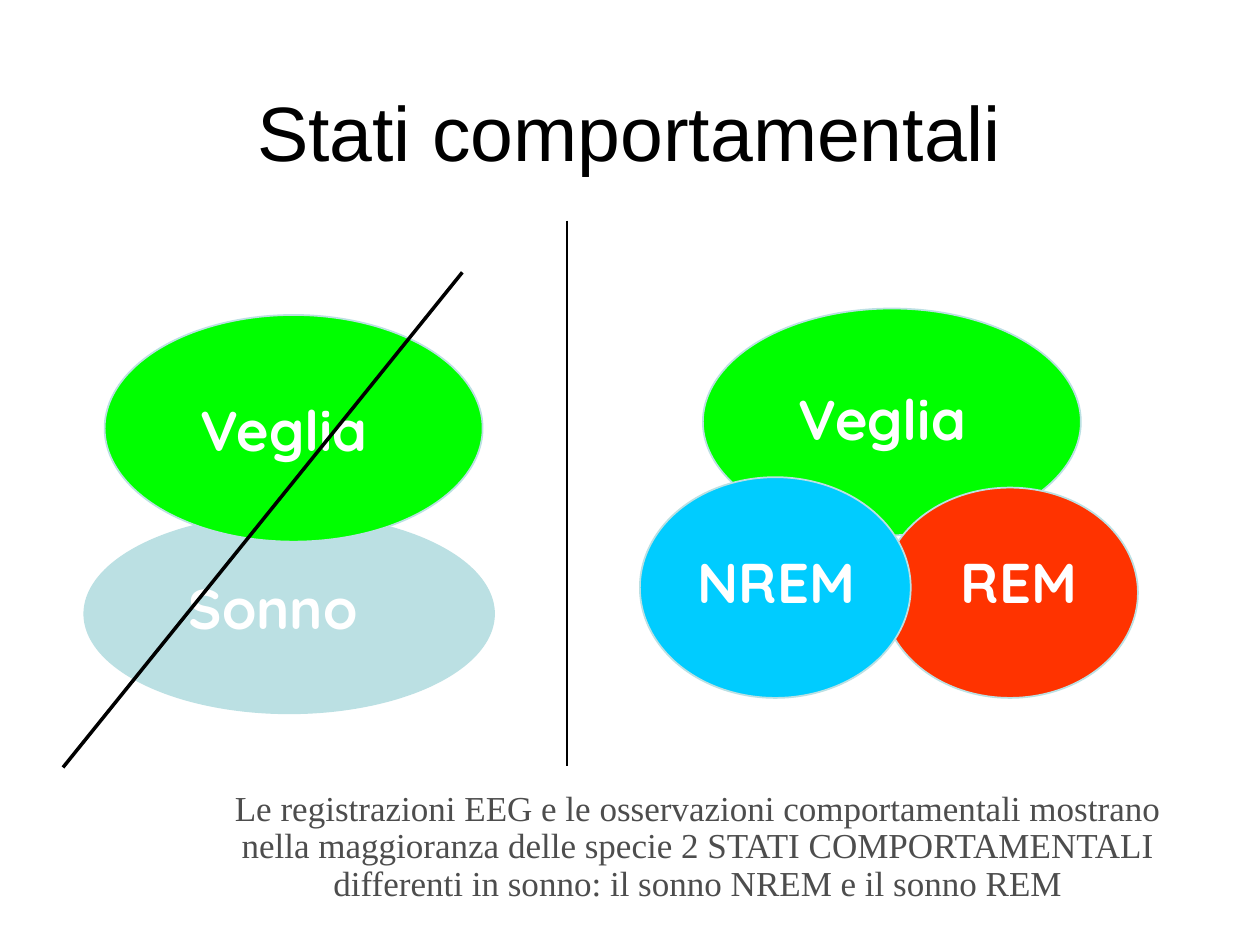
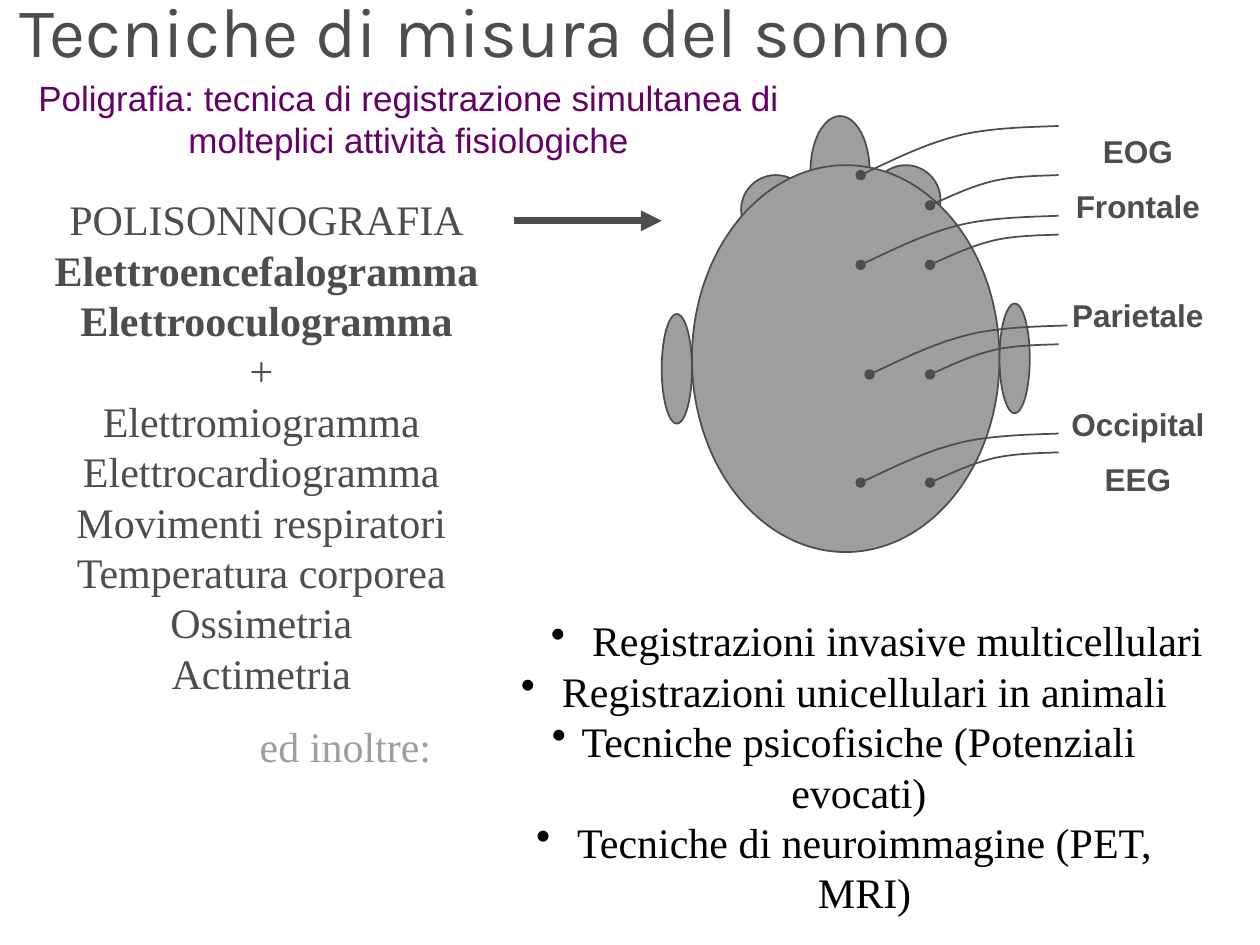
from pptx import Presentation
from pptx.dml.color import RGBColor
from pptx.enum.shapes import MSO_CONNECTOR, MSO_SHAPE
from pptx.enum.text import MSO_ANCHOR, PP_ALIGN
from pptx.oxml.ns import qn
from pptx.util import Cm, Pt
from lxml.etree import SubElement

COLORS = {
    "black": "000000", "white": "FFFFFF", "text": "4D4D4D", "grey": "9E9E9E",
    "wake": "00FF00", "sleep": "BBE0E3", "nrem": "00CCFF", "rem": "FF3300",
    "purple": "660066",
}
SERIF, SANS, ROUNDED, TITLE = "Times New Roman", "Arial", "Quicksand", "Karla"

# Lead from electrode to label, as fractions of its box: start, then two Bézier curves
LEAD_START = (0, 1)
LEAD_CURVES = [(.17, .68), (.33, .36), (.5, .19), (.67, .02), (.91, .02), (1, 0)]


def rgb(name):
    return RGBColor.from_string(COLORS[name])


def write(slide, box, lines, font, size, color, bold=False,
          align=PP_ALIGN.CENTER, anchor=MSO_ANCHOR.TOP, wrap=True):
    """Add a text box with one paragraph per line and return its paragraphs."""
    frame = slide.shapes.add_textbox(*map(Cm, box)).text_frame
    frame.word_wrap = wrap
    frame.vertical_anchor = anchor
    frame.text = "\n".join(lines)
    for paragraph in frame.paragraphs:
        paragraph.alignment = align
        paragraph.font.name = font
        paragraph.font.size = Pt(size)
        paragraph.font.bold = bold
        paragraph.font.color.rgb = rgb(color)
    return frame.paragraphs


def set_right_margin(paragraph, margin):
    paragraph._p.get_or_add_pPr().set("marR", str(Cm(margin)))


def add_bullet(paragraph, hang):
    properties = paragraph._p.get_or_add_pPr()
    properties.set("marL", str(Cm(hang)))
    properties.set("indent", str(-Cm(hang)))
    bullet = properties.makeelement(qn("a:buChar"), {"char": "•"})
    properties.insert_element_before(bullet, "a:tabLst", "a:defRPr", "a:extLst")


def add_ellipse(slide, origin, place, fill, outline):
    left, top, width, height = place
    ellipse = slide.shapes.add_shape(
        MSO_SHAPE.OVAL, Cm(origin[0] + left), Cm(origin[1] + top), Cm(width), Cm(height))
    ellipse.shadow.inherit = False
    ellipse.fill.solid()
    ellipse.fill.fore_color.rgb = rgb(fill)
    ellipse.line.color.rgb = rgb(outline)
    ellipse.line.width = Pt(1)


def add_line(slide, start, end, color, width, arrow=False):
    line = slide.shapes.add_connector(MSO_CONNECTOR.STRAIGHT, *map(Cm, start + end))
    line.line.color.rgb = rgb(color)
    line.line.width = Pt(width)
    if arrow:
        SubElement(line.line._get_or_add_ln(), qn("a:tailEnd"), type="triangle")
    SubElement(line._element.spPr, qn("a:effectLst"))


def add_states(slide, origin, ellipses, labels):
    """Overlapping ellipses with the state names above them."""
    for fill, place in ellipses:
        add_ellipse(slide, origin, place, fill, "sleep")
    for name, left, top, width in labels:
        write(slide, (origin[0] + left, origin[1] + top, width, 1.63), [name],
              ROUNDED, 32, "white", bold=True, anchor=MSO_ANCHOR.MIDDLE, wrap=False)


def add_two_state_model(slide, left, top, width, height):
    """Wake and sleep only, struck out by a diagonal."""
    add_states(slide, (left, top),
               [("sleep", (.43, 4.88, 8.26, 4.01)), ("wake", (.84, .86, 7.62, 4.57))],
               [("Veglia", 2.26, 2.34, 4.39), ("Sonno", 2.08, 5.94, 4.32)])
    add_line(slide, (left, top + height), (left + width, top), "black", 2)


def add_three_state_model(slide, left, top):
    add_states(slide, (left, top),
               [("wake", (1.27, 0, 7.62, 4.57)), ("rem", (4.88, 3.61, 5.16, 4.24)),
                ("nrem", (0, 3.4, 5.46, 4.45))],
               [("Veglia", 2.69, 1.4, 4.39), ("REM", 6.02, 4.67, 3.25),
                ("NREM", .66, 4.67, 4.19)])


def add_lead(slide, x, y, width, height):
    """Curved wire that starts with a dot at the electrode (x, y) and rises right."""
    def locate(point):
        return Cm(x + point[0] * width), Cm(y + (point[1] - 1) * height)

    builder = slide.shapes.build_freeform(*locate(LEAD_START))
    builder.add_line_segments([locate(point) for point in LEAD_CURVES], close=False)
    lead = builder.convert_to_shape()
    segments = list(lead._element.iter(qn("a:lnTo")))
    for first in range(0, len(segments), 3):
        curve = SubElement(segments[0].getparent(), qn("a:cubicBezTo"))
        for segment in segments[first:first + 3]:
            curve.append(segment[0])
    for segment in segments:
        segment.getparent().remove(segment)
    lead.shadow.inherit = False
    lead.fill.background()
    lead.line.color.rgb = rgb("text")
    lead.line.width = Pt(1)
    SubElement(lead.line._get_or_add_ln(), qn("a:headEnd"), type="oval")


def add_electrode_map(slide, left, top):
    """Head seen from above with its electrodes, leads and labels."""
    eye, ear = (1.4, 1.4), (.61, 2.21)
    for place in [(4.22, .99, *eye), (1.6, 1.19, *eye), (3, 0, 1.19, 2.21),
                  (.61, .99, 6.2, 7.8), (6.81, 3.78, *ear), (0, 3.99, *ear)]:
        add_ellipse(slide, (left, top), place, "grey", "text")
    for x, y in [(4.01, 1.19), (4.01, 3), (4.19, 5.21), (4.01, 7.39)]:
        add_lead(slide, left + x, top + y, 3.99, .99)
    for y in (1.8, 3, 5.21, 7.39):
        add_lead(slide, left + 5.41, top + y, 2.59, .61)
    labels = write(slide, (left + 8, top + .2, 3.2, 9.04),
                   ["EOG", "Frontale", "Parietale", "Occipital", "EEG"],
                   SANS, 18, "text", bold=True)
    for label, gap in zip(labels, (0, 9.9, 40.5, 40.5, 9.9)):
        label.space_before = Pt(gap)


def add_polysomnography_list(slide, box):
    lines = write(slide, box, [
        "POLISONNOGRAFIA", "Elettroencefalogramma", "Elettrooculogramma", "+",
        "Elettromiogramma", "Elettrocardiogramma", "Movimenti respiratori",
        "Temperatura corporea", "Ossimetria", "Actimetria"], SERIF, 24, "text")
    for line in lines[1:3]:
        line.font.bold = True
    set_right_margin(lines[3], .21)


def add_further_techniques(slide, box):
    techniques = write(slide, box, [
        "Registrazioni invasive multicellulari",
        "Registrazioni unicellulari in animali",
        "Tecniche psicofisiche (Potenziali evocati)",
        "Tecniche di neuroimmagine (PET, MRI)"], SERIF, 24, "black")
    for technique, hang in zip(techniques, (.83, .83, .6, .83)):
        add_bullet(technique, hang)
    set_right_margin(techniques[1], 1.33)


def build_states_slide(slide):
    write(slide, (1.9, .84, 21.59, 3.61), ["Stati comportamentali"],
          SANS, 44, "black", anchor=MSO_ANCHOR.MIDDLE)
    add_three_state_model(slide, 12.9, 6.22)
    add_line(slide, (11.43, 4.45), (11.43, 15.44), "black", .75)
    add_two_state_model(slide, 1.27, 5.49, 8.05, 9.98)
    caption, = write(slide, (3.81, 15.82, 20.52, 2.59), [
        "Le registrazioni EEG e le osservazioni comportamentali mostrano nella "
        "maggioranza delle specie 2 STATI COMPORTAMENTALI differenti in sonno: "
        "il sonno NREM e il sonno REM"], SERIF, 20, "text")
    caption.line_spacing = .9


def build_techniques_slide(slide):
    add_further_techniques(slide, (9.96, 12.27, 15.44, 5.38))
    add_electrode_map(slide, 13.34, 2.34)
    add_polysomnography_list(slide, (.74, 3.78, 9.27, 10.39))
    add_line(slide, (10.36, 4.45), (13.34, 4.45), "text", 4, arrow=True)
    write(slide, (4.88, 14.4, 4.17, 1.27), ["ed inoltre:"], SERIF, 24, "grey")
    write(slide, (.15, -.38, 24.13, 2.06), ["Tecniche di misura del sonno"],
          TITLE, 40, "text", align=PP_ALIGN.LEFT)
    write(slide, (.2, 1.42, 16.08, 1.96), [
        "Poligrafia: tecnica di registrazione simultanea di molteplici attività "
        "fisiologiche"], SANS, 20, "purple")


def main():
    presentation = Presentation()
    presentation.slide_width, presentation.slide_height = Cm(25.4), Cm(19.05)
    blank = presentation.slide_layouts[6]
    for build in (build_states_slide, build_techniques_slide):
        build(presentation.slides.add_slide(blank))
    presentation.save("out.pptx")


if __name__ == "__main__":
    main()
